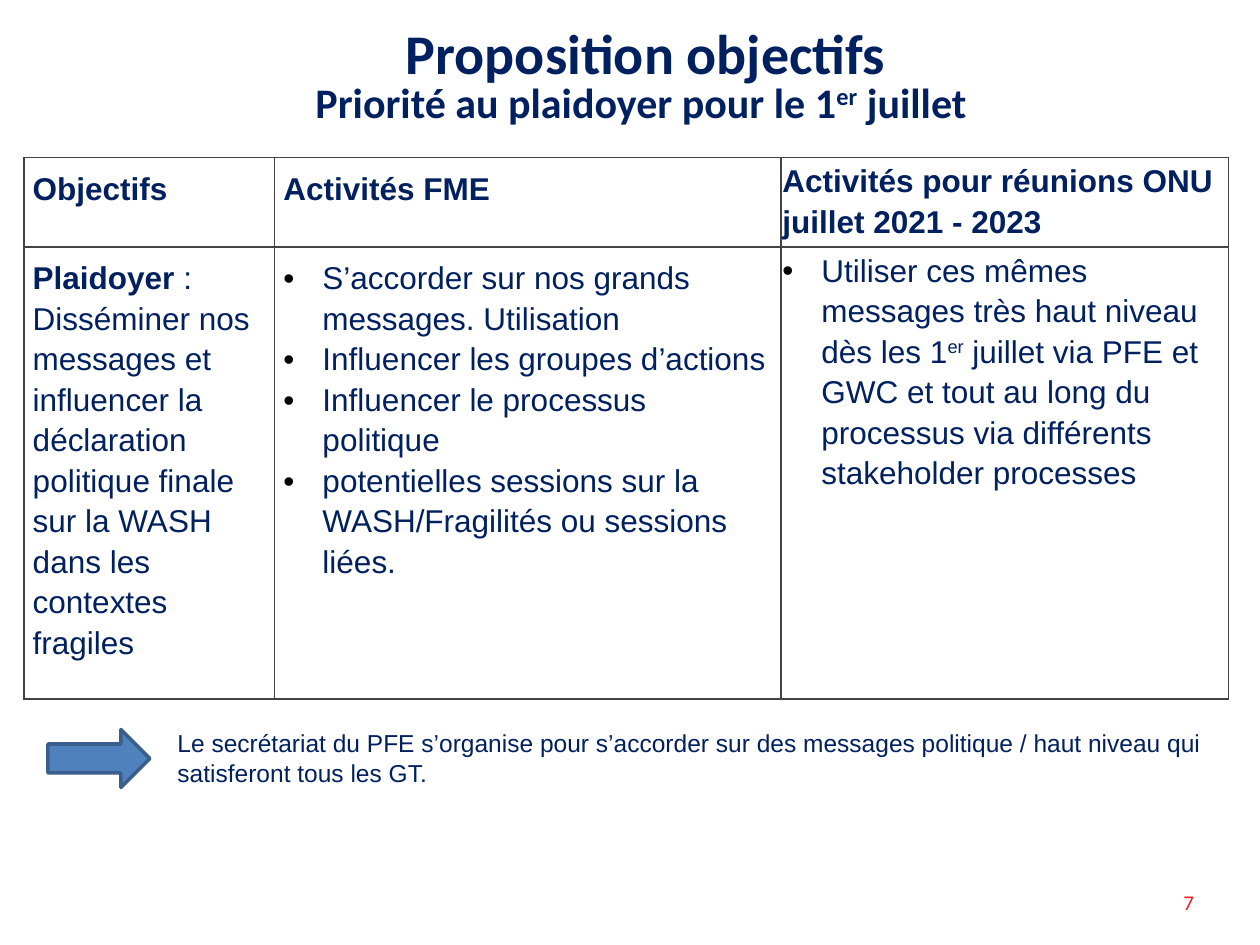
import dataclasses

import lxml.etree
import pptx
import pptx.dml.color
import pptx.enum.shapes
import pptx.enum.text
import pptx.oxml.ns
import pptx.util

Inches = pptx.util.Inches
Pt = pptx.util.Pt
Align = pptx.enum.text.PP_ALIGN
Anchor = pptx.enum.text.MSO_ANCHOR
qn = pptx.oxml.ns.qn


@dataclasses.dataclass(frozen=True)
class Theme:
    navy: str = "002060"
    red: str = "ED1C24"
    border: str = "434343"
    bullet: str = "000000"
    arrow_fill: str = "4F81BD"
    arrow_line: str = "3A5F8C"
    heading_font: str = "Calibri"
    body_font: str = "Arial"
    title_size: int = 32
    subtitle_size: int = 24
    table_size: int = 18
    note_size: int = 14
    number_size: int = 12


THEME = Theme()

HEADERS = ["Objectifs", "Activités FME", "Activités pour réunions ONU juillet 2021 - 2023"]
GOAL = [
    ("Plaidoyer ", "bold"),
    (": Disséminer nos messages et influencer la déclaration politique finale "
     "sur la WASH dans les contextes fragiles", ""),
]
ACTIVITIES = [
    "S’accorder sur nos grands messages. Utilisation",
    "Influencer les groupes d’actions",
    "Influencer le processus politique",
    "potentielles sessions sur la WASH/Fragilités ou sessions liées.",
]
MEETINGS = [
    ("Utiliser ces mêmes messages très haut niveau dès les 1", ""),
    ("er", "super"),
    (" juillet via PFE et GWC et tout au long du processus via différents stakeholder processes", ""),
]
NOTE = ("Le secrétariat du PFE s’organise pour s’accorder sur des messages politique / "
        "haut niveau qui satisferont tous les GT.")


def rgb(value):
    return pptx.dml.color.RGBColor.from_string(value)


def add_span(para, text, size, font=THEME.body_font, color=THEME.navy, style=""):
    span = para.add_run()
    span.text = text
    span.font.name = font
    span.font.size = Pt(size)
    span.font.bold = "bold" in style
    span.font.color.rgb = rgb(color)
    if "super" in style:
        span.font._element.set("baseline", "30000")


def set_margins(target, x, y):
    target.margin_left = target.margin_right = Inches(x)
    target.margin_top = target.margin_bottom = Inches(y)


def place(shape, box):
    shape.left, shape.top, shape.width, shape.height = map(Inches, box)


def add_title(page, box):
    title = page.shapes.title
    place(title, box)
    frame = title.text_frame
    frame.vertical_anchor = Anchor.MIDDLE
    frame.auto_size = pptx.enum.text.MSO_AUTO_SIZE.NONE
    set_margins(frame, 0.1, 0.05)
    para = frame.paragraphs[0]
    para.alignment = Align.CENTER
    para.line_spacing = 0.81
    para._p.get_or_add_pPr().set("marL", str(Inches(0.25)))
    add_span(para, "Proposition objectifs", THEME.title_size, THEME.heading_font, style="bold")
    para.add_line_break()
    line_break = para._p.find(qn("a:br"))
    lxml.etree.SubElement(line_break, qn("a:rPr"), sz=str(THEME.title_size * 100))
    for text, style in [("Priorité au plaidoyer pour le 1", "bold"),
                        ("er", "bold super"), (" juillet ", "bold")]:
        add_span(para, text, THEME.subtitle_size, THEME.heading_font, style=style)


def add_bullet(para):
    properties = para._p.get_or_add_pPr()
    properties.set("marL", str(Inches(0.31)))
    properties.set("indent", str(-Inches(0.31)))
    color = lxml.etree.SubElement(properties, qn("a:buClr"))
    lxml.etree.SubElement(color, qn("a:srgbClr"), val=THEME.bullet)
    lxml.etree.SubElement(properties, qn("a:buFont"), typeface=THEME.body_font)
    lxml.etree.SubElement(properties, qn("a:buChar"), char="•")


def draw_borders(cell):
    properties = cell._tc.get_or_add_tcPr()
    for index, side in enumerate(["lnL", "lnR", "lnT", "lnB"]):
        line = lxml.etree.Element(qn("a:" + side), w=str(Pt(1)))
        fill = lxml.etree.SubElement(line, qn("a:solidFill"))
        lxml.etree.SubElement(fill, qn("a:srgbClr"), val=THEME.border)
        properties.insert(index, line)


def fill_cell(cell, paragraphs, bulleted, margin):
    set_margins(cell, margin, margin)
    cell.fill.background()
    draw_borders(cell)
    frame = cell.text_frame
    for index, spans in enumerate(paragraphs):
        para = frame.add_paragraph() if index else frame.paragraphs[0]
        if bulleted:
            add_bullet(para)
        para.line_spacing = 1.15
        for text, style in spans:
            add_span(para, text, THEME.table_size, style=style)


def add_objectives(page, box):
    table = page.shapes.add_table(2, 3, *map(Inches, box)).table
    table.first_row = table.horz_banding = False
    for row, height in zip(table.rows, [0.66, box[3] - 0.66]):
        row.height = Inches(height)
    bodies = [[GOAL], [[(text, "")] for text in ACTIVITIES], [MEETINGS]]
    widths = [1.99, 4.02, 3.55]
    margins = [0.07, 0.07, 0.01]
    for index, (header, body, width, margin) in enumerate(zip(HEADERS, bodies, widths, margins)):
        table.columns[index].width = Inches(width)
        fill_cell(table.cell(0, index), [[(header, "bold")]], False, margin)
        fill_cell(table.cell(1, index), body, index > 0, margin)


def add_arrow(page, box):
    arrow = page.shapes.add_shape(pptx.enum.shapes.MSO_SHAPE.RIGHT_ARROW, *map(Inches, box))
    arrow.shadow.inherit = False
    arrow.fill.solid()
    arrow.fill.fore_color.rgb = rgb(THEME.arrow_fill)
    arrow.line.color.rgb = rgb(THEME.arrow_line)
    arrow.line.width = Pt(2)


def add_text(page, box, text, size, font, color, align, anchor):
    frame = page.shapes.add_textbox(*map(Inches, box)).text_frame
    frame.word_wrap = True
    frame.vertical_anchor = anchor
    set_margins(frame, 0.1, 0.05)
    frame.paragraphs[0].alignment = align
    add_span(frame.paragraphs[0], text, size, font, color)


def add_takeaway(page, box):
    left, top, width, height = box
    add_arrow(page, (left, top + 0.06, 0.81, 0.46))
    add_text(page, (left + 0.93, top, width - 0.93, height), NOTE, THEME.note_size,
             THEME.body_font, THEME.navy, Align.LEFT, Anchor.TOP)


def main():
    deck = pptx.Presentation()
    deck.slide_width, deck.slide_height = Inches(10), Inches(7.5)
    page = deck.slides.add_slide(deck.slide_layouts[5])
    add_text(page, (9.21, 6.96, 0.45, 0.4), "7", THEME.number_size,
             THEME.heading_font, THEME.red, Align.CENTER, Anchor.MIDDLE)
    add_title(page, (0, 0, 10, 1.25))
    add_objectives(page, (0.19, 1.25, 9.56, 4.02))
    add_takeaway(page, (0.38, 5.73, 9.38, 0.57))
    deck.save("out.pptx")


if __name__ == "__main__":
    main()
